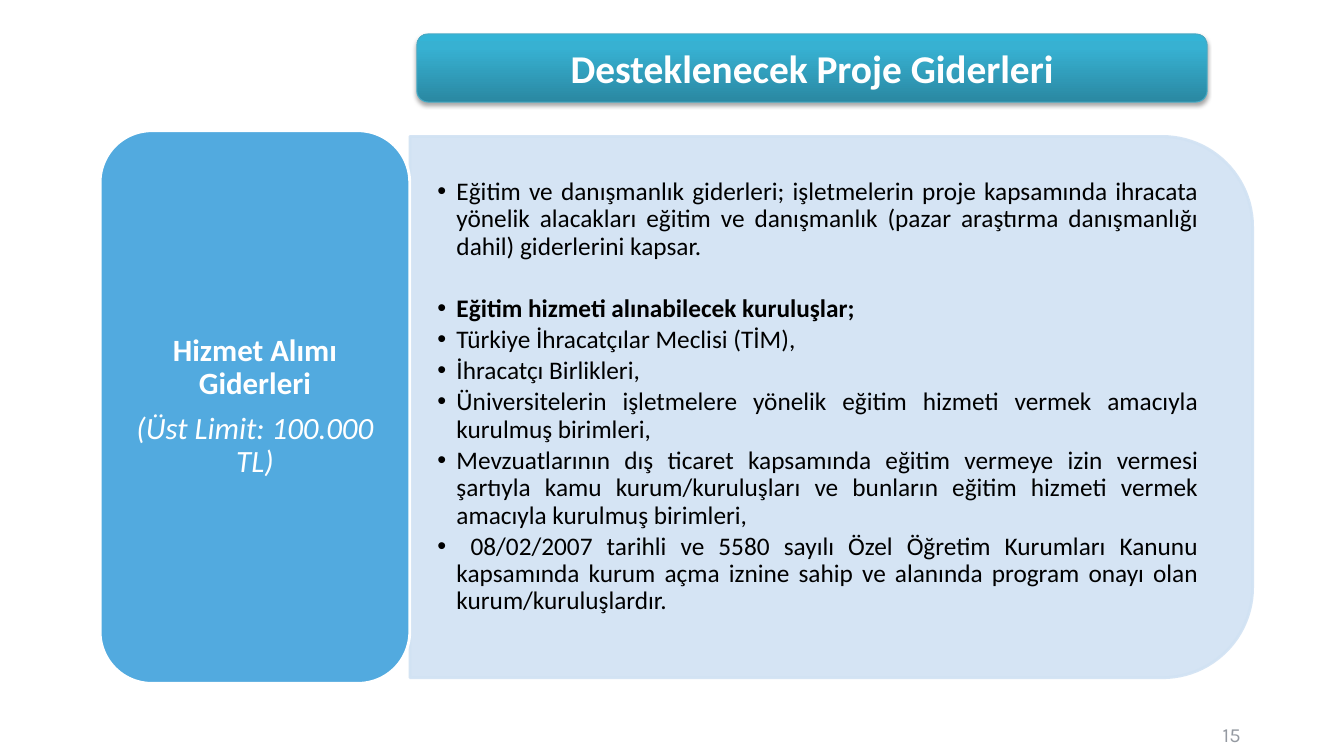
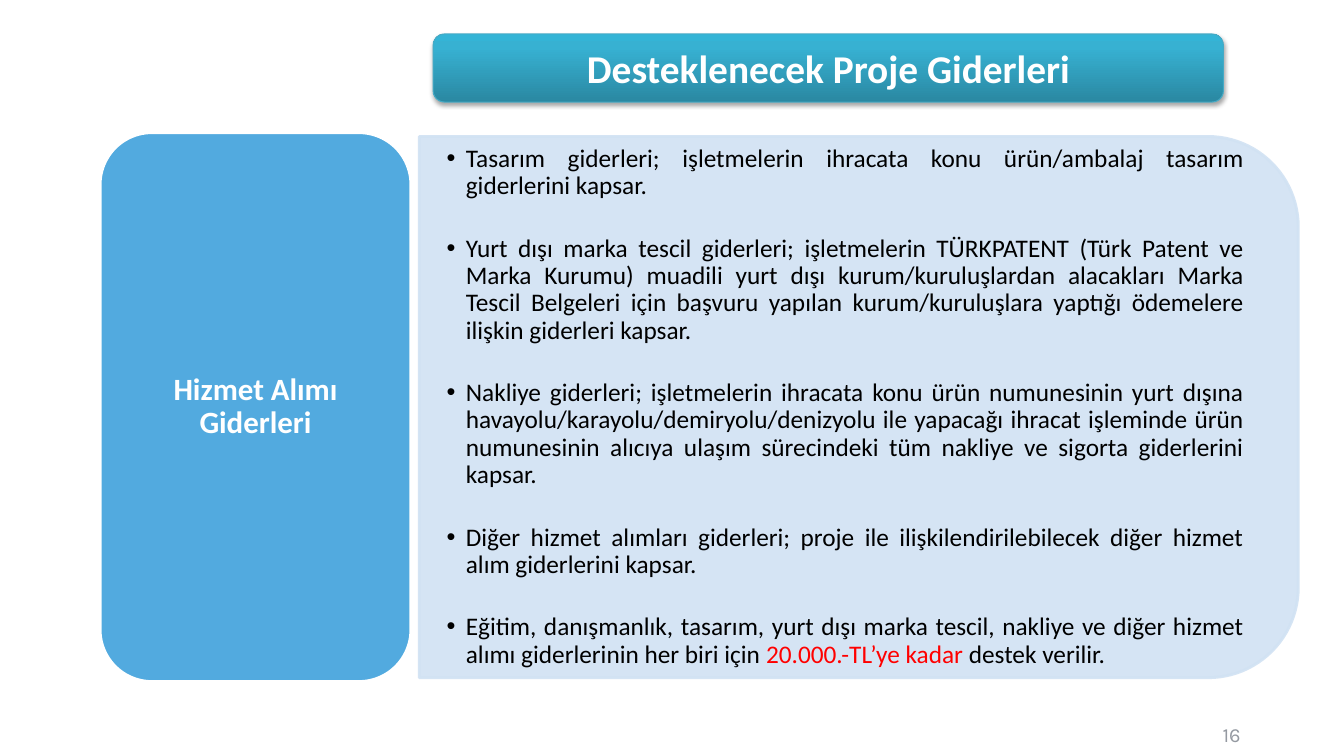
from copy import deepcopy

from pptx import Presentation
from pptx.dml.color import RGBColor
from pptx.enum.shapes import MSO_SHAPE as Shape
from pptx.enum.text import MSO_ANCHOR as Anchor, MSO_AUTO_SIZE as AutoSize, PP_ALIGN as Align
from pptx.oxml.ns import qn
from pptx.oxml.xmlchemy import OxmlElement
from pptx.util import Emu, Inches, Pt

FONT, NUMBER_FONT = "Calibri", "Karla"
WHITE, BLACK, RED, GREY = "FFFFFF", "000000", "FF0000", "9499A1"
LABEL_BLUE, PANEL_BLUE, BAR_EDGE = "52AADF", "D1E2F3", "46AAC5"
BAR_STOPS = [(0, "2A88A2"), (0.8, "37B1D2"), (1, "34B4D6")]
LINE_GAP, BLOCK_GAP = 2.7, 25  # points after a bullet: next line, next block

prs = Presentation()
prs.slide_width, prs.slide_height = Inches(13.28), Inches(7.47)
COL, ROW = prs.slide_width / 100, prs.slide_height / 100
MIDDLE = 53.85  # row on which label, panel and text are centred


def rgb(value):
    return RGBColor.from_string(value)


def add_child(parent, tag, **attributes):
    child = OxmlElement(tag)
    for key, value in attributes.items():
        child.set(key, str(value))
    parent.append(child)
    return child


# Bullets: (text before, red text, text after), bold, points after
slides = [
    dict(
        bar_left=31.02, label_height=73.1, label_width=23.04,
        panel_left=30.5, panel_width=62.7, bottom_inset=0.34,
        label=["Hizmet Alımı Giderleri", "(Üst Limit: 100.000 TL)"],
        bullets=[
            (["Eğitim ve danışmanlık giderleri; işletmelerin proje kapsamında ihracata yönelik alacakları "
              "eğitim ve danışmanlık (pazar araştırma danışmanlığı dahil) giderlerini kapsar."], False, BLOCK_GAP),
            (["Eğitim hizmeti alınabilecek kuruluşlar;"], True, LINE_GAP),
            (["Türkiye İhracatçılar Meclisi (TİM),"], False, LINE_GAP),
            (["İhracatçı Birlikleri,"], False, LINE_GAP),
            (["Üniversitelerin işletmelere yönelik eğitim hizmeti vermek amacıyla kurulmuş birimleri,"],
             False, LINE_GAP),
            (["Mevzuatlarının dış ticaret kapsamında eğitim vermeye izin vermesi şartıyla kamu "
              "kurum/kuruluşları ve bunların eğitim hizmeti vermek amacıyla kurulmuş birimleri,"],
             False, LINE_GAP),
            ([" 08/02/2007 tarihli ve 5580 sayılı Özel Öğretim Kurumları Kanunu kapsamında kurum açma "
              "iznine sahip ve alanında program onayı olan kurum/kuruluşlardır."], False, LINE_GAP),
        ],
    ),
    dict(
        bar_left=32.23, label_height=72.6, label_width=23.12,
        panel_left=31.2, panel_width=65.4, bottom_inset=0.14,
        label=["Hizmet Alımı Giderleri"],
        bullets=[
            (["Tasarım giderleri; işletmelerin ihracata konu ürün/ambalaj tasarım giderlerini kapsar."],
             False, BLOCK_GAP),
            (["Yurt dışı marka tescil giderleri; işletmelerin TÜRKPATENT (Türk Patent ve Marka Kurumu) "
              "muadili yurt dışı kurum/kuruluşlardan alacakları Marka Tescil Belgeleri için başvuru yapılan "
              "kurum/kuruluşlara yaptığı ödemelere ilişkin giderleri kapsar."], False, BLOCK_GAP),
            (["Nakliye giderleri; işletmelerin ihracata konu ürün numunesinin yurt dışına "
              "havayolu/karayolu/demiryolu/denizyolu ile yapacağı ihracat işleminde ürün numunesinin "
              "alıcıya ulaşım sürecindeki tüm nakliye ve sigorta giderlerini kapsar."], False, BLOCK_GAP),
            (["Diğer hizmet alımları giderleri; proje ile ilişkilendirilebilecek diğer hizmet alım "
              "giderlerini kapsar."], False, BLOCK_GAP),
            (["Eğitim, danışmanlık, tasarım, yurt dışı marka tescil, nakliye ve diğer hizmet alımı "
              "giderlerinin her biri için ", "20.000.-TL’ye kadar", " destek verilir."], False, LINE_GAP),
        ],
    ),
]

for number, content in enumerate(slides, start=15):
    slide = prs.slides.add_slide(prs.slide_layouts[5])
    shapes = slide.shapes

    # Title bar with the title placeholder on top
    bar_box = [Emu(int(v)) for v in (content["bar_left"] * COL, 4.5 * ROW, 58.8 * COL, 9 * ROW)]
    bar = shapes.add_shape(Shape.ROUNDED_RECTANGLE, *bar_box)
    bar.fill.gradient()
    bar.fill.gradient_angle = 90
    stop_list = bar._element.spPr.find(qn("a:gradFill")).find(qn("a:gsLst"))
    stop_list.append(deepcopy(stop_list[0]))
    for stop, (position, colour) in zip(bar.fill.gradient_stops, BAR_STOPS):
        stop.position = position
        stop.color.rgb = rgb(colour)
    bar.line.color.rgb = rgb(BAR_EDGE)
    bar.line.width = Pt(0.75)
    bar.shadow.inherit = False
    shadow = add_child(bar._element.spPr.find(qn("a:effectLst")), "a:outerShdw",
                       blurRad=Pt(3.1), dist=Pt(1.8), dir=90 * 60000, rotWithShape=0)
    add_child(add_child(shadow, "a:srgbClr", val=BLACK), "a:alpha", val=35000)

    title = shapes.title
    title.left, title.top, title.width, title.height = bar_box
    shapes._spTree.append(title._element)
    title.text_frame.text = "Desteklenecek Proje Giderleri"
    title.text_frame.auto_size = AutoSize.NONE
    title.text_frame.vertical_anchor = Anchor.MIDDLE
    heading = title.text_frame.paragraphs[0]
    heading.alignment = Align.CENTER
    heading.font.name, heading.font.size, heading.font.bold = FONT, Pt(28), True
    heading.font.color.rgb = rgb(WHITE)

    # Pale panel: a shape with two round corners, turned by a quarter
    panel_left, panel_width = content["panel_left"] * COL, content["panel_width"] * COL
    depth = 71.6 * ROW
    panel = shapes.add_shape(
        Shape.ROUND_2_SAME_RECTANGLE,
        int(panel_left + (panel_width - depth) / 2), int(MIDDLE * ROW - panel_width / 2),
        int(depth), int(panel_width))
    panel.rotation = 90
    panel.shadow.inherit = False
    panel.fill.solid()
    panel.fill.fore_color.rgb = rgb(PANEL_BLUE)
    panel.line.color.rgb = rgb(PANEL_BLUE)
    panel.line.width = Pt(2)
    for colour in panel._element.spPr.iter(qn("a:srgbClr")):
        add_child(colour, "a:alpha", val=90000)

    bullet_box = shapes.add_textbox(
        int(panel_left), int((MIDDLE - 32.35) * ROW), int(panel_width - 2 * COL), int(64.7 * ROW))
    frame = bullet_box.text_frame
    frame.word_wrap = True
    frame.vertical_anchor = Anchor.MIDDLE
    frame.margin_left = frame.margin_right = Inches(0.27)
    frame.margin_top, frame.margin_bottom = Inches(0.14), Inches(content["bottom_inset"])
    for index, (parts, bold, gap) in enumerate(content["bullets"]):
        bullet = frame.add_paragraph() if index else frame.paragraphs[0]
        properties = bullet._p.get_or_add_pPr()
        properties.set("marL", str(Inches(0.19)))
        properties.set("indent", str(-Inches(0.19)))
        add_child(properties, "a:buFont", typeface="Arial")
        add_child(properties, "a:buChar", char="•")
        bullet.alignment = Align.JUSTIFY
        bullet.line_spacing = 0.9
        bullet.space_after = Pt(gap)
        bullet.font.name, bullet.font.size, bullet.font.bold = FONT, Pt(18), bold
        bullet.font.color.rgb = rgb(BLACK)
        for part_index, part in enumerate(parts):
            run = bullet.add_run()
            run.text = part
            if part_index == 1:
                run.font.color.rgb = rgb(RED)

    # Blue label on the left
    label_height = content["label_height"]
    label = shapes.add_shape(
        Shape.ROUNDED_RECTANGLE, int(7.45 * COL), int((MIDDLE - label_height / 2) * ROW),
        int(content["label_width"] * COL), int(label_height * ROW))
    label.shadow.inherit = False
    label.fill.solid()
    label.fill.fore_color.rgb = rgb(LABEL_BLUE)
    label.line.color.rgb = rgb(WHITE)
    label.line.width = Pt(2)
    frame = label.text_frame
    frame.word_wrap = True
    frame.vertical_anchor = Anchor.MIDDLE
    frame.margin_left = frame.margin_right = Inches(0.09)
    frame.margin_top = frame.margin_bottom = Inches(0.05)
    for index, text in enumerate(content["label"]):
        line = frame.add_paragraph() if index else frame.paragraphs[0]
        line.text = text
        line.alignment = Align.CENTER
        line.line_spacing = 0.9
        line.space_after = Pt(7.7)
        line.font.name, line.font.size = FONT, Pt(22)
        line.font.bold, line.font.italic = index == 0, index > 0
        line.font.color.rgb = rgb(WHITE)

    # Page number
    page = shapes.add_textbox(int(69.7 * COL), int(94.5 * ROW), int(23.35 * COL), int(5.4 * ROW))
    page.text_frame.word_wrap = True
    page.text_frame.vertical_anchor = Anchor.MIDDLE
    page_line = page.text_frame.paragraphs[0]
    page_line.text = str(number)
    page_line.alignment = Align.RIGHT
    page_line.font.name, page_line.font.size = NUMBER_FONT, Pt(14.3)
    page_line.font.color.rgb = rgb(GREY)

prs.save("out.pptx")
